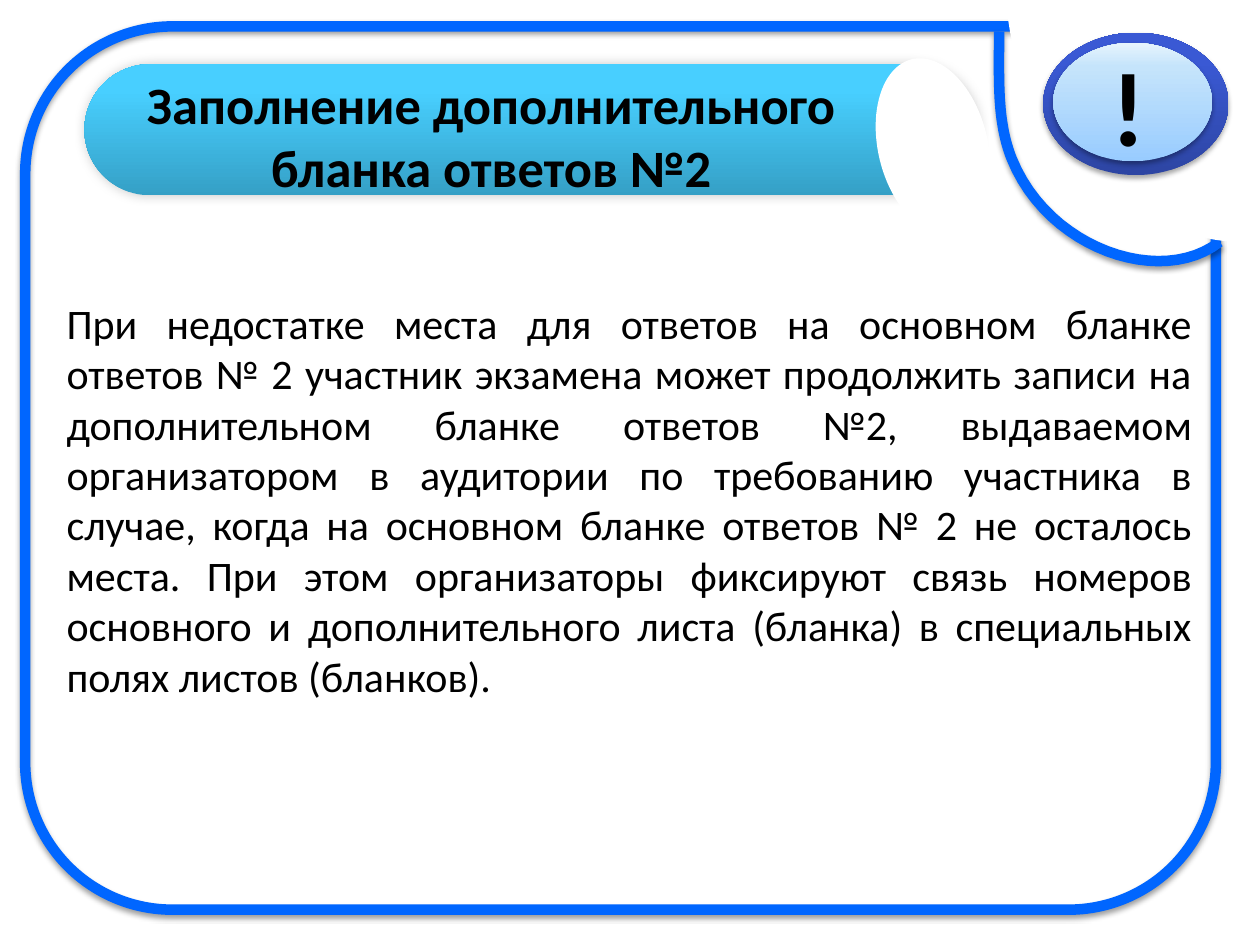
from copy import deepcopy
from lxml import etree
from pptx import Presentation
from pptx import util as u
from pptx.dml.color import RGBColor
from pptx.enum import shapes, text
from pptx.oxml.ns import qn

WIDTH, HEIGHT = 10, 7.5
BLUE, WHITE, BLACK = "0066FF", "FFFFFF", "000000"
FRAME_SHADOW = (38, 3.1, 1.6, 90)
BADGE_SHADOW = (35, 3.1, 1.8, 90)
OVAL, ROUNDED = shapes.MSO_SHAPE.OVAL, shapes.MSO_SHAPE.ROUNDED_RECTANGLE
CENTER, JUSTIFY = text.PP_ALIGN.CENTER, text.PP_ALIGN.JUSTIFY

FRAME = (ROUNDED, (0.2, 0.21, 9.45, 7.01), dict(line=(BLUE, 6), shadow=FRAME_SHADOW))
ARC = [(9.68, 1.92),
       ((9.22, 2.28), (8.32, 1.98), (8.03, 1.26)),
       ((7.91, 0.96), (7.93, 0.62), (7.93, 0.25))]
CORNER = [(7.99, 0), (10, 0), (10, 1.94),
          ((9.86, 1.9), (9.69, 1.91), (9.56, 1.87)), (8.36, 1.57),
          ((8.26, 1.13), (8.12, 0.69), (8.03, 0.25))]
BANNER = [
    (ROUNDED, (0.67, 0.51, 7.09, 1.04),
     dict(gradient=("35A0C6", "48CFFF", "49CFFF"), shadow=(20, 6, 0, 225), adjust=0.5)),
    (OVAL, (6.97, 0.45, 0.87, 1.43), dict(fill=WHITE, rotation=346.4)),
]
BADGE = [
    (OVAL, (8.28, 0.26, 1.47, 1.13),
     dict(gradient=("2D45A3", "3A59D4", "3758D7"), shadow=BADGE_SHADOW)),
    (OVAL, (8.36, 0.34, 1.26, 0.94),
     dict(gradient=("99CCFF", "C5E4FB", "E7F4FD"), shadow=BADGE_SHADOW)),
]
TITLE = ("Заполнение дополнительного бланка ответов №2",
         (0.91, 0.52, 5.98, 1.11), CENTER, dict(size=u.Pt(30), bold=True))
MARK = ("!", (8.46, 0.28, 1, 1.11), CENTER, dict(size=u.Pt(60), bold=True))
BODY = (
    "При недостатке места для ответов на основном бланке ответов № 2 участник экзамена "
    "может продолжить записи на дополнительном бланке ответов №2, выдаваемом "
    "организатором в аудитории по требованию участника в случае, когда на основном "
    "бланке ответов № 2 не осталось места. При этом организаторы фиксируют связь номеров "
    "основного и дополнительного листа (бланка) в специальных полях листов (бланков).",
    (0.43, 2.31, 9.13, 3.33), JUSTIFY, dict(size=u.Pt(24)))


def color(value):
    return RGBColor.from_string(value)


def add_shadow(shape, opacity, blur, distance, angle):
    effects = shape._element.spPr.find(qn("a:effectLst"))
    shadow = etree.SubElement(effects, qn("a:outerShdw"), blurRad=str(u.Pt(blur)),
                              dist=str(u.Pt(distance)), dir=str(angle * 60000),
                              rotWithShape="0")
    tint = etree.SubElement(shadow, qn("a:srgbClr"), val=BLACK)
    etree.SubElement(tint, qn("a:alpha"), val=str(opacity * 1000))


def paint_gradient(shape, colors):
    shape.fill.gradient()
    shape.fill.gradient_angle = 90
    stops = shape._element.spPr.find(".//" + qn("a:gsLst"))
    stops.append(deepcopy(stops[-1]))
    for stop, position, value in zip(shape.fill.gradient_stops, (0, 0.8, 1), colors):
        stop.position = position
        stop.color.rgb = color(value)


def style(shape, fill=None, gradient=None, line=None, shadow=None, adjust=None, rotation=0):
    shape.shadow.inherit = False
    shape.rotation = rotation
    if adjust is not None:
        shape.adjustments[0] = adjust
    if gradient:
        paint_gradient(shape, gradient)
    elif fill:
        shape.fill.solid()
        shape.fill.fore_color.rgb = color(fill)
    else:
        shape.fill.background()
    if line:
        shape.line.color.rgb = color(line[0])
        shape.line.width = u.Pt(line[1])
    else:
        shape.line.fill.background()
    if shadow:
        add_shadow(shape, *shadow)


def add_shape(page, kind, place, looks):
    style(page.shapes.add_shape(kind, *map(u.Inches, place)), **looks)


def trace(outline, steps=24):
    """Return the outline's points, with each cubic curve split into short lines."""
    points = [outline[0]]
    for part in outline[1:]:
        if not isinstance(part[0], tuple):
            points.append(part)
            continue
        curve = [points[-1], *part]
        for t in (step / steps for step in range(1, steps + 1)):
            weights = ((1 - t) ** 3, 3 * t * (1 - t) ** 2, 3 * t * t * (1 - t), t ** 3)
            points.append(tuple(sum(w * p[axis] for w, p in zip(weights, curve))
                                for axis in (0, 1)))
    return points


def add_outline(page, outline, closed, **looks):
    points = [tuple(map(u.Inches, point)) for point in trace(outline)]
    builder = page.shapes.build_freeform(*points[0])
    builder.add_line_segments(points[1:], close=closed)
    style(builder.convert_to_shape(), **looks)


def add_text(page, words, place, alignment, font):
    box = page.shapes.add_textbox(*map(u.Inches, place))
    box.text_frame.word_wrap = True
    box.text_frame.auto_size = text.MSO_AUTO_SIZE.SHAPE_TO_FIT_TEXT
    para = box.text_frame.paragraphs[0]
    para.alignment = alignment
    span = para.add_run()
    span.text = words
    span.font.color.rgb = color(BLACK)
    for name, value in dict(name="Calibri", **font).items():
        setattr(span.font, name, value)


def main():
    deck = Presentation()
    deck.slide_width, deck.slide_height = u.Inches(WIDTH), u.Inches(HEIGHT)
    page = deck.slides.add_slide(deck.slide_layouts[6])
    add_shape(page, *FRAME)
    add_outline(page, ARC, False, line=(BLUE, 6), shadow=FRAME_SHADOW)
    for part in BANNER:
        add_shape(page, *part)
    add_text(page, *TITLE)
    add_outline(page, CORNER, True, fill=WHITE, line=(WHITE, 2))
    for part in BADGE:
        add_shape(page, *part)
    for part in (MARK, BODY):
        add_text(page, *part)
    deck.save("out.pptx")


if __name__ == "__main__":
    main()
